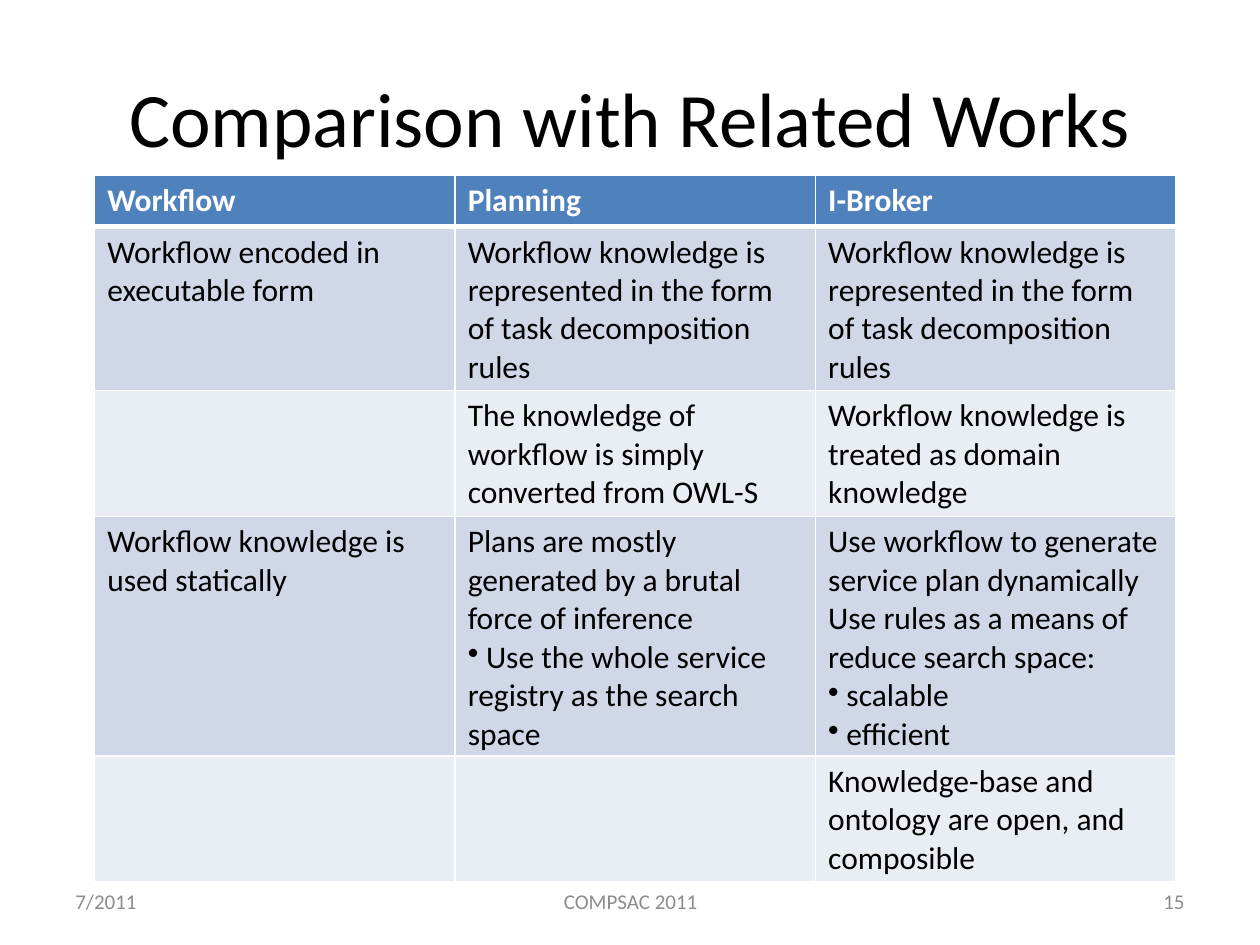
from pptx import Presentation
from pptx.dml.color import RGBColor
from pptx.enum import text as t
from pptx.oxml import parse_xml
from pptx.oxml.ns import nsdecls
from pptx.util import Cm, Pt

BLACK = RGBColor(0x00, 0x00, 0x00)
WHITE = RGBColor(0xFF, 0xFF, 0xFF)
GREY = RGBColor(0x8C, 0x8C, 0x8C)
BLUE = RGBColor(0x4F, 0x81, 0xBD)
BAND = RGBColor(0xD0, 0xD8, 0xE8)
PALE = RGBColor(0xE9, 0xED, 0xF4)
LEFT, MID, RIGHT = t.PP_ALIGN.LEFT, t.PP_ALIGN.CENTER, t.PP_ALIGN.RIGHT


def add_run(para, words, size, color, bold=False):
    run = para.add_run()
    run.text = words
    font = run.font
    font.name, font.size, font.bold = "Calibri", Pt(size), bold
    font.color.rgb = color


def add_line(props, side, width):
    props.append(parse_xml(
        f'<a:ln{side} {nsdecls("a")} w="{Pt(width)}"><a:solidFill>'
        f'<a:srgbClr val="{WHITE}"/></a:solidFill></a:ln{side}>'))


prs = Presentation()
prs.slide_width, prs.slide_height = Cm(25.4), Cm(19.05)
slide = prs.slides.add_slide(prs.slide_layouts[6])

# Title and footer: words, left, top, width, height, size, color, align
labels = [
    ("Comparison with Related Works", 1.27, 0.76, 22.86, 3.18, 44, BLACK, MID),
    ("7/2011", 1.27, 17.65, 5.92, 1.02, 12, GREY, LEFT),
    ("15", 18.21, 17.65, 5.92, 1.02, 12, GREY, RIGHT),
    ("COMPSAC 2011", 8.69, 17.65, 8.05, 1.02, 12, GREY, MID),
]
for words, x, y, w, h, size, color, align in labels:
    frame = slide.shapes.add_textbox(Cm(x), Cm(y), Cm(w), Cm(h)).text_frame
    frame.word_wrap = True
    frame.vertical_anchor = t.MSO_ANCHOR.MIDDLE
    para = frame.paragraphs[0]
    para.alignment = align
    add_run(para, words, size, color)

# Table text: each cell is a list of paragraphs, "•" marks a bullet
rules = ["Workflow knowledge is represented in the form of task decomposition rules"]
rows = [
    [["Workflow"], ["Planning"], ["I-Broker"]],
    [["Workflow encoded in executable form"], rules, rules],
    [[],
     ["The knowledge of workflow is simply converted from OWL-S"],
     ["Workflow knowledge is treated as domain knowledge"]],
    [["Workflow knowledge is used statically"],
     ["Plans are mostly generated by a brutal force of inference",
      "• Use the whole service registry as the search space"],
     ["Use workflow to generate service plan dynamically",
      "Use rules as a means of reduce search space:",
      "• scalable",
      "• efficient"]],
    [[], [], ["Knowledge-base and ontology are open, and composible"]],
]

# Table: rows start at one line high and grow with their text
table = slide.shapes.add_table(
    len(rows), 3, Cm(1.91), Cm(3.54), Cm(21.8), Cm(1.03 * len(rows))).table
for r, row in enumerate(rows):
    head = r == 0
    for c, lines in enumerate(row):
        cell = table.cell(r, c)
        props = cell._tc.get_or_add_tcPr()
        for side in "LRTB":
            thick = (r, side) in [(0, "B"), (1, "T")]
            add_line(props, side, 3 if thick else 1)
        cell.fill.solid()
        cell.fill.fore_color.rgb = BLUE if head else BAND if r % 2 else PALE

        frame = cell.text_frame
        for n, line in enumerate(lines):
            para = frame.add_paragraph() if n else frame.paragraphs[0]
            if line.startswith("•"):
                para._p.get_or_add_pPr().append(
                    parse_xml(f'<a:buChar {nsdecls("a")} char="•"/>'))
                line = line[1:]
            add_run(para, line, 18, WHITE if head else BLACK, head)

prs.save("out.pptx")
